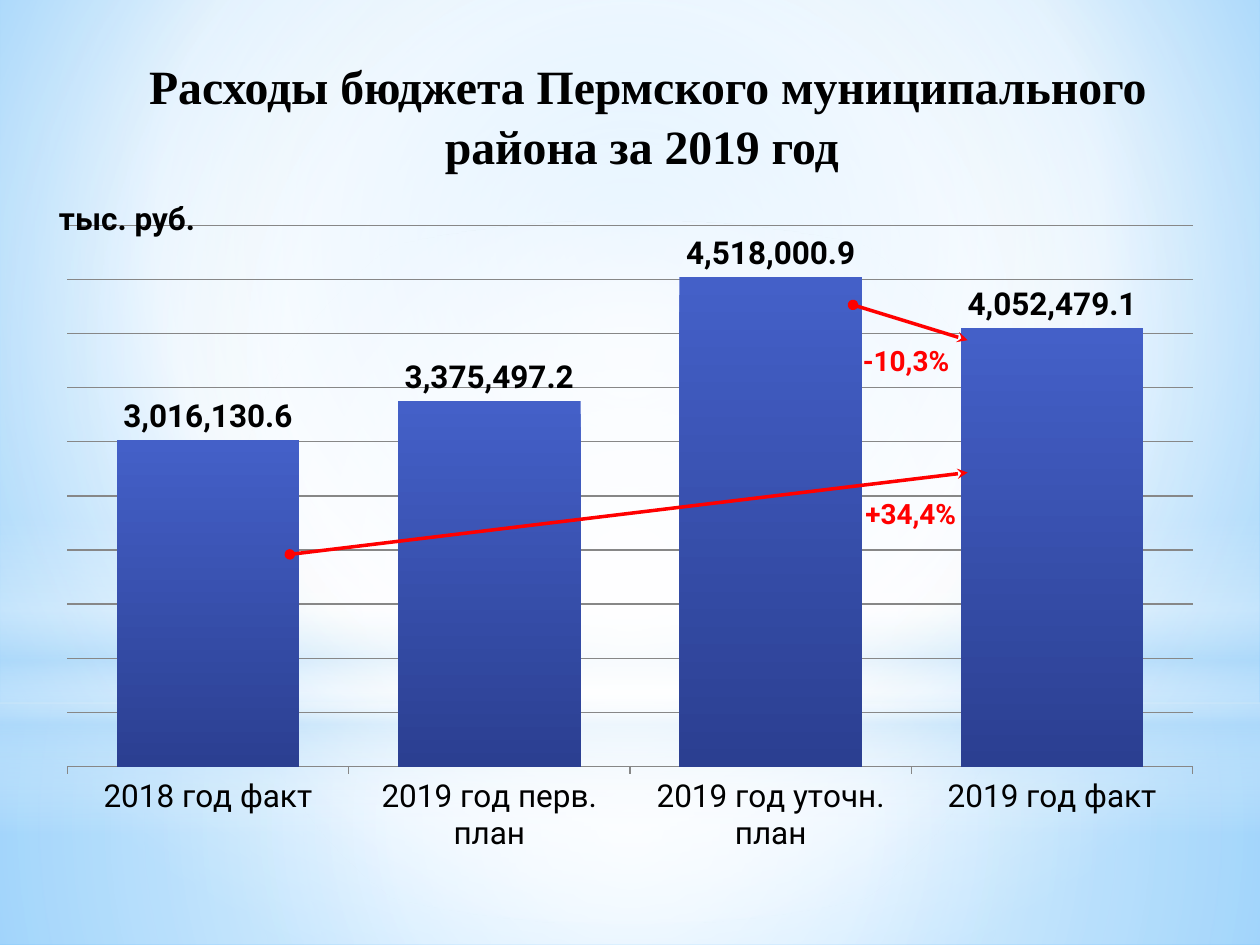
from dataclasses import dataclass

from lxml import etree
from pptx import Presentation
from pptx.chart.data import CategoryChartData
from pptx.dml.color import RGBColor
from pptx.enum.chart import XL_CHART_TYPE, XL_LABEL_POSITION, XL_TICK_LABEL_POSITION, XL_TICK_MARK
from pptx.enum.shapes import MSO_CONNECTOR, MSO_SHAPE
from pptx.enum.text import MSO_ANCHOR, PP_ALIGN
from pptx.oxml import parse_xml
from pptx.oxml.ns import nsdecls, qn
from pptx.util import Inches, Pt

COLUMN = XL_CHART_TYPE.COLUMN_CLUSTERED
OUTSIDE_END = XL_LABEL_POSITION.OUTSIDE_END
LOW = XL_TICK_LABEL_POSITION.LOW
TICK_OUT, TICK_NONE = XL_TICK_MARK.OUTSIDE, XL_TICK_MARK.NONE
STRAIGHT = MSO_CONNECTOR.STRAIGHT
RECT, OVAL = MSO_SHAPE.RECTANGLE, MSO_SHAPE.OVAL
TOP, MIDDLE = MSO_ANCHOR.TOP, MSO_ANCHOR.MIDDLE
LEFT, CENTER = PP_ALIGN.LEFT, PP_ALIGN.CENTER


@dataclass(frozen=True)
class Theme:
    heading: str = "Times New Roman"
    body: str = "Roboto"
    text: str = "000000"
    accent: str = "FF0000"
    grid: str = "878787"
    white: str = "FFFFFF"
    sky: str = "B4DCFA"
    bar_top: str = "4460C8"
    bar_bottom: str = "2B3F91"
    title_size: float = 27.3
    chart_size: int = 18
    change_size: int = 16


T = Theme()
CENTRE = (50, 50, 50, 50)
CATEGORIES = ["2018 год факт", "2019 год перв. план", "2019 год уточн. план", "2019 год факт"]
EXPENSES = [3016130.6, 3375497.2, 4518000.9, 4052479.1]


def rgb(value):
    return RGBColor.from_string(value)


def box_of(box):
    return [Inches(v) for v in box]


def set_format(target, values):
    for name, value in values.items():
        setattr(target, name, value)


def set_font(font, name, size, color, bold=False):
    set_format(font, {"name": name, "size": Pt(size), "bold": bold})
    font.color.rgb = rgb(color)


def gradient(fill, owner, stops, focus=None, angle=90):
    fill.solid()
    marks = "".join(
        f'<a:gs pos="{pos * 1000}"><a:srgbClr val="{color}">'
        f'<a:alpha val="{opacity * 1000}"/></a:srgbClr></a:gs>'
        for pos, color, opacity in stops
    )
    if focus:
        edges = " ".join(f'{side}="{v * 1000}"' for side, v in zip("ltrb", focus))
        shade = f'<a:path path="circle"><a:fillToRect {edges}/></a:path>'
    else:
        shade = f'<a:lin ang="{angle * 60000}" scaled="0"/>'
    xml = f'<a:gradFill {nsdecls("a")} rotWithShape="1"><a:gsLst>{marks}</a:gsLst>{shade}</a:gradFill>'
    solid = next(owner.iter(qn("a:solidFill")))
    solid.getparent().replace(solid, parse_xml(xml))


def add_backdrop(s, box):
    left, top, width, height = box
    gradient(s.background.fill, s._element,
             [(0, "9ED5FF", 100), (60, T.white, 100), (100, "5BB9FF", 100)], (20, 10, 20, 60))
    horizon = 5.58
    layers = [
        (RECT, horizon, height - horizon,
         [(0, T.white, 91), (37, T.white, 76), (100, T.sky, 79)], CENTRE),
        (RECT, 0, horizon,
         [(0, T.white, 89), (48, T.white, 62), (100, T.sky, 79)], CENTRE),
        (RECT, 4.12, 2.5,
         [(0, T.white, 0), (29, T.white, 30), (45, T.sky, 40),
          (55, T.white, 26), (65, T.sky, 60), (100, T.white, 0)], None),
        (OVAL, 1.75, horizon, [(0, T.white, 100), (56, T.white, 0)], CENTRE),
    ]
    for kind, offset, depth, stops, focus in layers:
        sp = s.shapes.add_shape(kind, *box_of((left, top + offset, width, depth)))
        sp.shadow.inherit = False
        sp.line.fill.background()
        gradient(sp.fill, sp._element, stops, focus)


def add_text(s, box, text, font, align=LEFT, anchor=TOP, inset=0.1, spacing=1):
    tf = s.shapes.add_textbox(*box_of(box)).text_frame
    set_format(tf, {"word_wrap": True, "vertical_anchor": anchor,
                    "margin_left": Inches(inset), "margin_right": Inches(inset)})
    p = tf.paragraphs[0]
    set_format(p, {"alignment": align, "line_spacing": spacing})
    r = p.add_run()
    r.text = text
    set_font(r.font, *font, bold=True)


def add_title(s, box):
    add_text(s, box, " Расходы бюджета Пермского муниципального района за 2019 год",
             (T.heading, T.title_size, T.text), CENTER, MIDDLE, 0.3, 1.05)


def set_plot_layout(chart, box):
    area = chart._chartSpace.chart.plotArea
    for old in area.findall(qn("c:layout")):
        area.remove(old)
    modes = '<c:layoutTarget val="inner"/><c:xMode val="edge"/><c:yMode val="edge"/>'
    sizes = "".join(f'<c:{name} val="{v}"/>' for name, v in zip("xywh", box))
    area.insert(0, parse_xml(
        f'<c:layout {nsdecls("c")}><c:manualLayout>{modes}{sizes}</c:manualLayout></c:layout>'))


def add_expense_chart(s, box):
    data = CategoryChartData(number_format="#,##0.0")
    data.categories = CATEGORIES
    data.add_series("Series 1", EXPENSES)
    chart = s.shapes.add_chart(COLUMN, *box_of(box), data).chart
    set_format(chart, {"has_legend": False, "has_title": False})
    set_font(chart.font, T.body, T.chart_size, T.text)
    set_plot_layout(chart, (0.02, 0.05, 0.97, 0.8))

    set_format(chart.value_axis, {"visible": False, "has_major_gridlines": True,
                                  "minimum_scale": 0, "maximum_scale": 5000000,
                                  "major_unit": 500000})
    set_format(chart.category_axis, {"major_tick_mark": TICK_OUT, "minor_tick_mark": TICK_NONE,
                                     "tick_label_position": LOW})
    for line in (chart.value_axis.major_gridlines.format.line, chart.category_axis.format.line):
        line.color.rgb = rgb(T.grid)
        line.width = Pt(0.75)

    plot = chart.plots[0]
    set_format(plot, {"gap_width": 54, "vary_by_categories": False, "has_data_labels": True})
    labels = plot.data_labels
    set_format(labels, {"show_value": True, "number_format": "#,##0.0",
                        "number_format_is_linked": False, "position": OUTSIDE_END})
    set_font(labels.font, T.body, T.chart_size, T.text, True)
    bars = plot.series[0]
    gradient(bars.format.fill, bars._element, [(0, T.bar_top, 100), (100, T.bar_bottom, 100)])

    add_text(s, (box[0] + 0.02, box[1] + 0.01, 1.5, 0.4), "тыс. руб.",
             (T.body, T.chart_size, T.text))


def add_change(s, box, start, end, text):
    line = s.shapes.add_connector(STRAIGHT, *box_of((*start, *end)))
    line.line.color.rgb = rgb(T.accent)
    line.line.width = Pt(2)
    ln = line.line._get_or_add_ln()
    for name, kind in (("a:headEnd", "oval"), ("a:tailEnd", "stealth")):
        etree.SubElement(ln, qn(name), type=kind, w="med", len="med")
    etree.SubElement(line._element.spPr, qn("a:effectLst"))
    add_text(s, box, text, (T.body, T.change_size, T.accent))


def main():
    prs = Presentation()
    prs.slide_width, prs.slide_height = Inches(10), Inches(7.5)
    s = prs.slides.add_slide(prs.slide_layouts[6])
    add_backdrop(s, (0, 0, 10, 7.5))
    add_title(s, (0.35, 0.29, 9.49, 1.23))
    add_expense_chart(s, (0.35, 1.52, 9.21, 5.37))
    add_change(s, (6.77, 3.89, 1.18, 0.37), (2.3, 4.4), (7.68, 3.75), "+34,4%")
    add_change(s, (6.75, 2.68, 1.18, 0.37), (6.77, 2.42), (7.68, 2.7), "-10,3%")
    prs.save("out.pptx")


if __name__ == "__main__":
    main()
